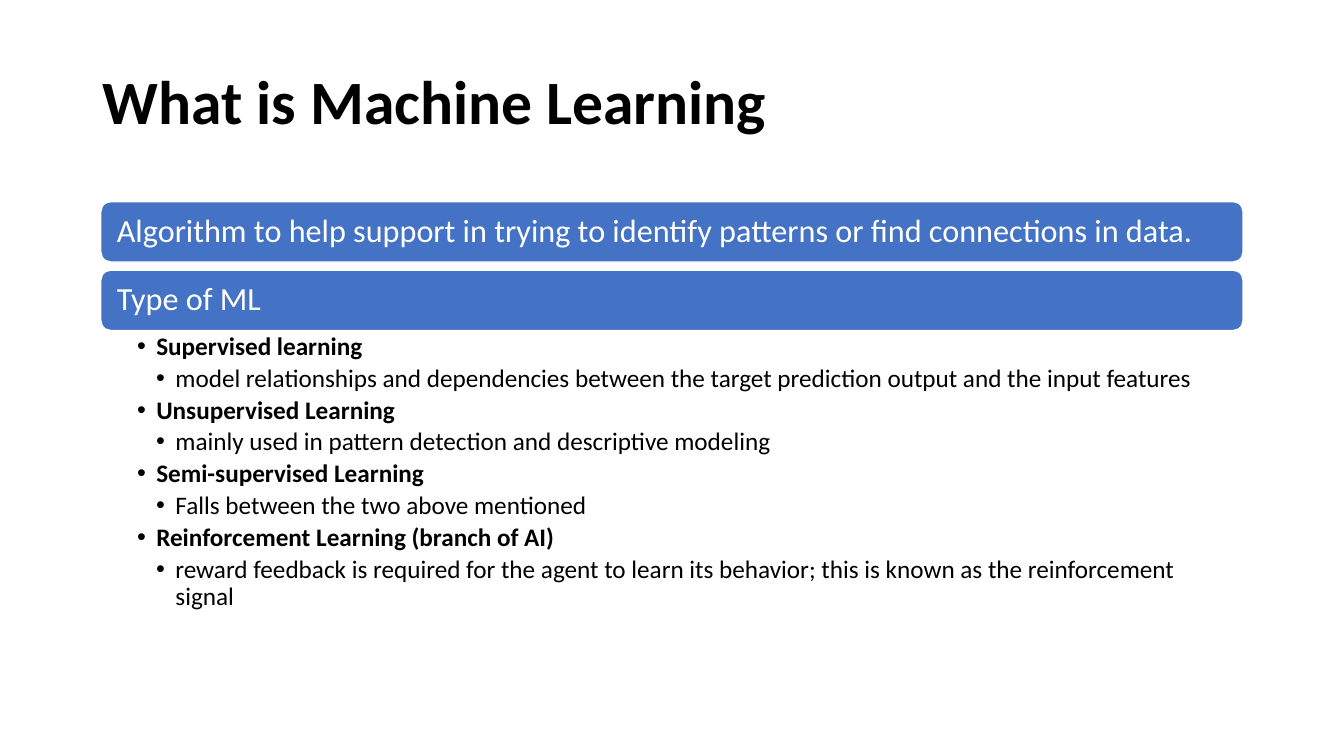
from lxml.etree import SubElement
from pptx import Presentation
from pptx.dml.color import RGBColor
from pptx.enum.shapes import MSO_SHAPE as Shape
from pptx.enum.text import MSO_ANCHOR as Anchor, MSO_AUTO_SIZE as AutoSize, PP_ALIGN as Align
from pptx.oxml.ns import qn
from pptx.util import Inches, Pt

COLORS = {"ink": "000000", "paper": "FFFFFF", "bar": "4472C4"}
LEFT, WIDTH = 1, 11.33
BAR_TOP, BAR_HEIGHT, BAR_STEP = 2, 0.6, 0.68
INDENT = 0.19

HEADLINES = [
    "Algorithm to help support in trying to identify patterns or find connections in data.",
    "Type of ML",
]
LEARNING_TYPES = [
    ("Supervised learning",
     "model relationships and dependencies between the target prediction output and the input features"),
    ("Unsupervised Learning", "mainly used in pattern detection and descriptive modeling"),
    ("Semi-supervised Learning", "Falls between the two above mentioned"),
    ("Reinforcement Learning (branch of AI)",
     "reward feedback is required for the agent to learn its behavior; "
     "this is known as the reinforcement signal"),
]


def apply(target, values):
    for name, value in values.items():
        setattr(target, name, value)


class SlideBuilder:
    font_name = "Calibri"

    def __init__(self, slide):
        self.slide = slide

    def color(self, name):
        return RGBColor.from_string(COLORS[name])

    def place(self, shape, left, top, width, height):
        apply(shape, {"left": Inches(left), "top": Inches(top),
                      "width": Inches(width), "height": Inches(height)})

    def frame(self, shape, left, top, right, bottom, anchor):
        """Set the text insets and anchor, and return the text frame."""
        frame = shape.text_frame
        apply(frame, {"margin_left": Inches(left), "margin_top": Inches(top),
                      "margin_right": Inches(right), "margin_bottom": Inches(bottom),
                      "vertical_anchor": anchor, "word_wrap": True,
                      "auto_size": AutoSize.NONE})
        return frame

    def add_text(self, paragraph, text, size, color, bold=False, space_after=0):
        apply(paragraph, {"alignment": Align.LEFT, "line_spacing": 0.9,
                          "space_before": Pt(0), "space_after": Pt(space_after)})
        run = paragraph.add_run()
        run.text = text
        apply(run.font, {"name": self.font_name, "size": Pt(size), "bold": bold})
        run.font.color.rgb = self.color(color)

    def title(self, text):
        title = self.slide.shapes.title
        self.place(title, 0.92, 0.4, 11.5, 1.27)
        frame = self.frame(title, 0.1, 0.05, 0.1, 0.05, Anchor.MIDDLE)
        self.add_text(frame.paragraphs[0], text, 44, "ink", bold=True)

    def bar(self, text, top):
        bar = self.slide.shapes.add_shape(
            Shape.ROUNDED_RECTANGLE, Inches(LEFT), Inches(top), Inches(WIDTH), Inches(BAR_HEIGHT))
        bar.shadow.inherit = False
        bar.fill.solid()
        bar.fill.fore_color.rgb = self.color("bar")
        bar.line.color.rgb = self.color("paper")
        bar.line.width = Pt(1)
        frame = self.frame(bar, 0.13, 0.1, 0.13, 0.1, Anchor.MIDDLE)
        self.add_text(frame.paragraphs[0], text, 23, "paper")

    def bullet(self, paragraph, level):
        paragraph.level = level
        properties = paragraph._p.get_or_add_pPr()
        properties.set("marL", str(Inches(INDENT * level)))
        properties.set("indent", str(-Inches(INDENT)))
        SubElement(properties, qn("a:buChar"), char="•")

    def outline(self, groups, top, height):
        """Fill the body with bold headings, each followed by an indented detail."""
        body = self.slide.placeholders[1]
        self.place(body, LEFT, top, WIDTH, height)
        frame = self.frame(body, 0.36, 0.03, 0.18, 0.03, Anchor.TOP)
        lines = [(text, level) for group in groups for level, text in enumerate(group, 1)]
        for index, (text, level) in enumerate(lines):
            paragraph = frame.add_paragraph() if index else frame.paragraphs[0]
            self.bullet(paragraph, level)
            self.add_text(paragraph, text, 18, "ink", bold=level == 1, space_after=3.3)


def main():
    deck = Presentation()
    deck.slide_width, deck.slide_height = Inches(13.33), Inches(7.5)
    builder = SlideBuilder(deck.slides.add_slide(deck.slide_layouts[1]))
    builder.title("What is Machine Learning")
    for index, headline in enumerate(HEADLINES):
        builder.bar(headline, BAR_TOP + index * BAR_STEP)
    builder.outline(LEARNING_TYPES, 3.28, 2.97)
    deck.save("out.pptx")


if __name__ == "__main__":
    main()
